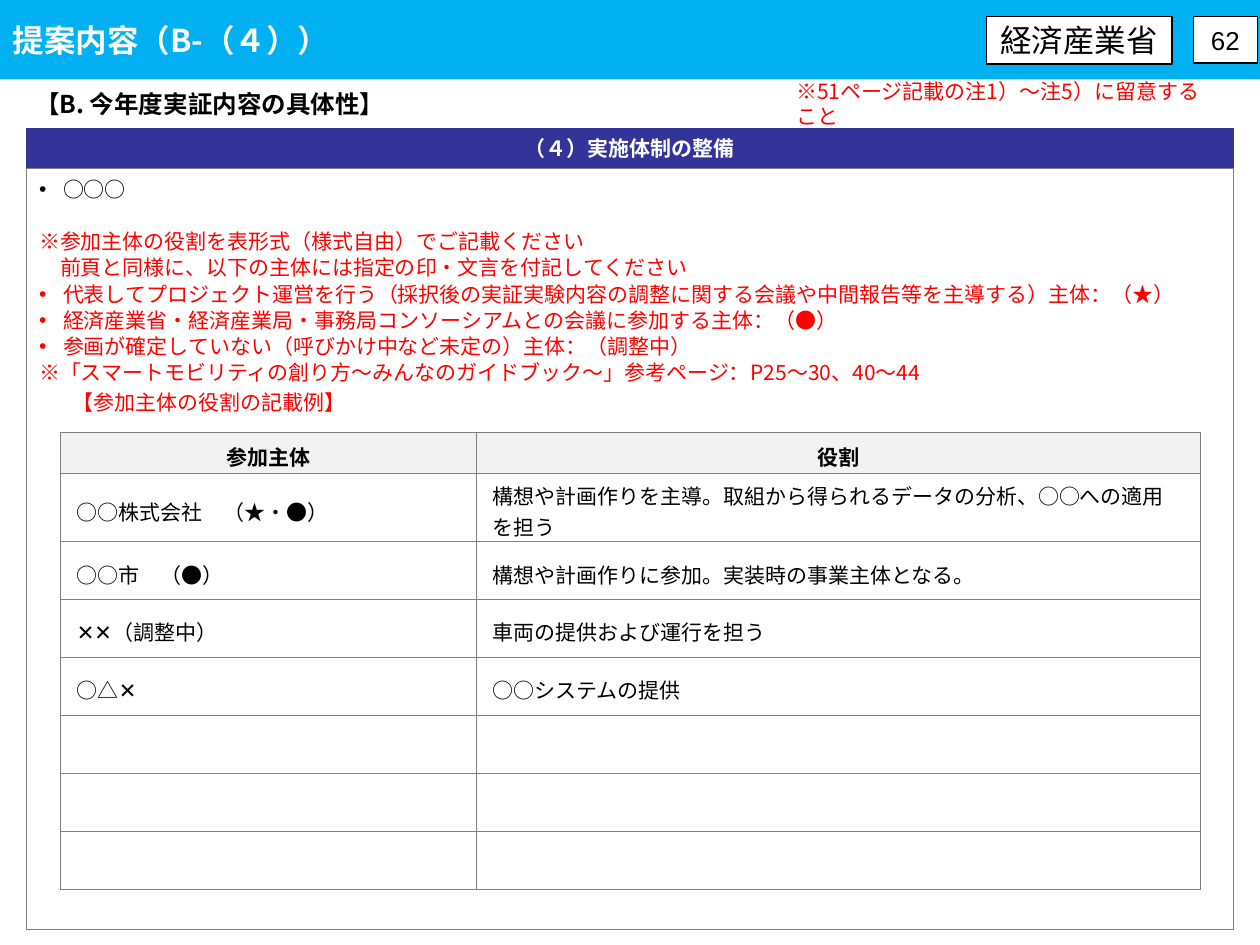
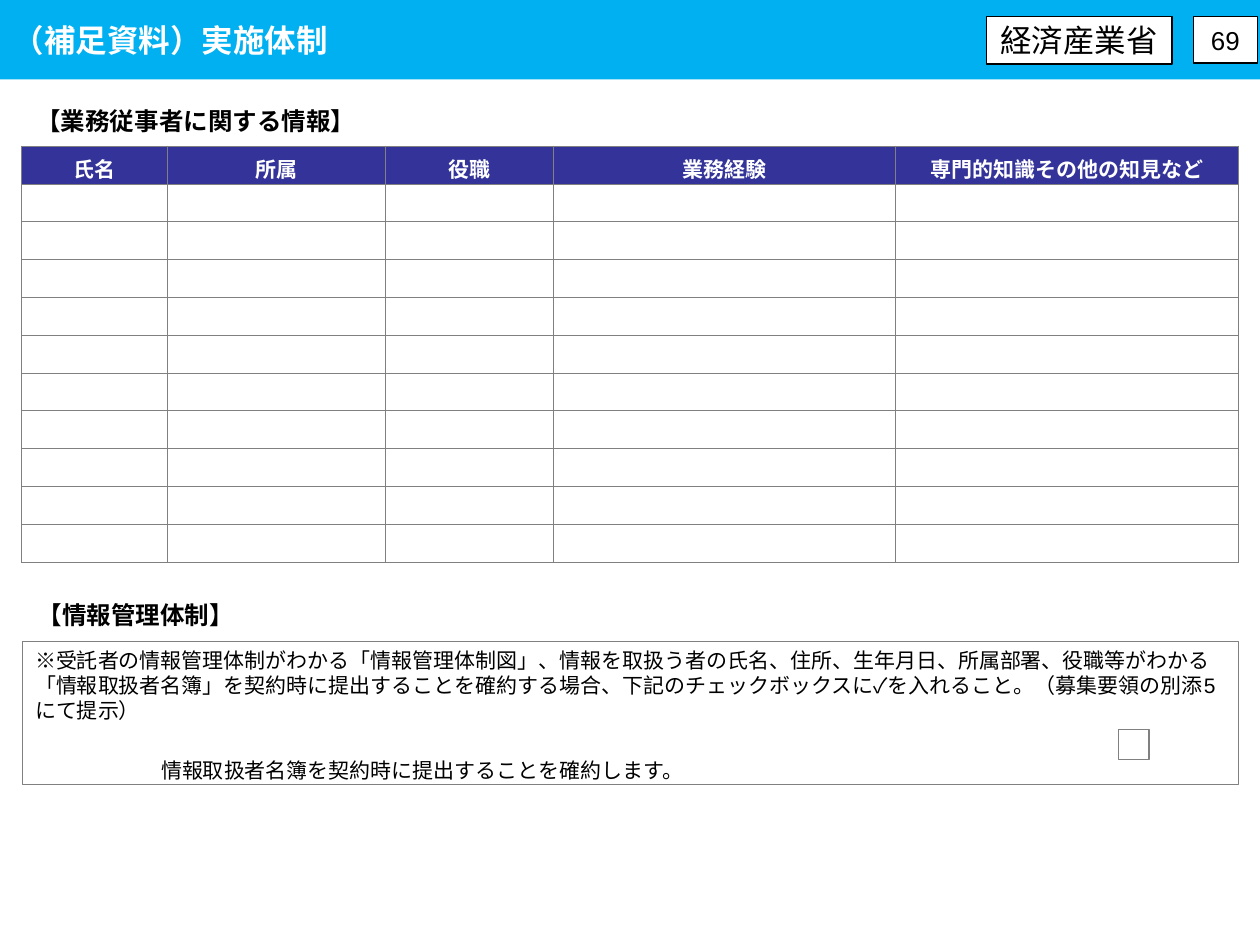
from lxml import etree
from pptx import Presentation
from pptx.dml.color import RGBColor
from pptx.enum.shapes import MSO_SHAPE
from pptx.enum.text import MSO_ANCHOR, MSO_AUTO_SIZE, PP_ALIGN
from pptx.oxml.ns import qn
from pptx.util import Inches, Pt

RECTANGLE = MSO_SHAPE.RECTANGLE
MIDDLE, TOP = MSO_ANCHOR.MIDDLE, MSO_ANCHOR.TOP
LEFT, CENTER = PP_ALIGN.LEFT, PP_ALIGN.CENTER
NO_FIT = MSO_AUTO_SIZE.NONE
TITLE_AND_BODY, TITLE_ONLY = 1, 5

SKY, NAVY, GRAY, PALE = "00B0F0", "333399", "808080", "F2F2F2"
WHITE, BLACK, RED = "FFFFFF", "000000", "FF0000"
SANS, CJK = "Arial", "Noto Sans CJK JP"
LIST_PITCH, NOTE_PITCH = 15, 14.4

GUIDANCE = [
    ("○○○", True, BLACK, 0),
    ("※参加主体の役割を表形式（様式自由）でご記載ください", False, RED, LIST_PITCH),
    ("　前頁と同様に、以下の主体には指定の印・文言を付記してください", False, RED, 0),
    ("代表してプロジェクト運営を行う（採択後の実証実験内容の調整に関する会議や"
     "中間報告等を主導する）主体：（★）", True, RED, 0),
    ("経済産業省・経済産業局・事務局コンソーシアムとの会議に参加する主体：（●）", True, RED, 0),
    ("参画が確定していない（呼びかけ中など未定の）主体：（調整中）", True, RED, 0),
    ("※「スマートモビリティの創り方～みんなのガイドブック～」参考ページ："
     "P25～30、40～44", False, RED, 0),
]
ROLES = [
    ("参加主体", "役割"),
    ("○○株式会社　（★・●）",
     "構想や計画作りを主導。取組から得られるデータの分析、○○への適用を担う"),
    ("○○市　（●）", "構想や計画作りに参加。実装時の事業主体となる。"),
    ("✕✕（調整中）", "車両の提供および運行を担う"),
    ("○△✕", "○○システムの提供"),
] + [("", "")] * 3
STAFF = [("氏名", "所属", "役職", "業務経験", "専門的知識その他の知見など")] + [("",) * 5] * 10
PLEDGE_NOTE = (
    "※受託者の情報管理体制がわかる「情報管理体制図」、情報を取扱う者の氏名、住所、"
    "生年月日、所属部署、役職等がわかる「情報取扱者名簿」を契約時に提出することを"
    "確約する場合、下記のチェックボックスに✓を入れること。（募集要領の別添5にて提示）"
)


def color(code):
    """Turn a hex string into a colour."""
    return RGBColor.from_string(code)


def place(shape, box):
    """Move a shape to a left, top, width, height box in inches."""
    shape.left, shape.top, shape.width, shape.height = map(Inches, box)


def write(para, text, size, ink=BLACK, font=CJK, bold=False, align=LEFT, pitch=None, before=0):
    """Fill a paragraph with text in one style."""
    para.text = text
    para.alignment = align
    para.space_before = Pt(before)
    if pitch:
        para.line_spacing = Pt(pitch)
    para.font.size = Pt(size)
    para.font.bold = bold
    para.font.color.rgb = color(ink)
    para.font.name = font
    defaults = para._p.pPr.find(qn("a:defRPr"))
    latin = defaults.find(qn("a:latin"))
    latin.addnext(defaults.makeelement(qn("a:ea"), {"typeface": CJK}))
    if not text:
        etree.SubElement(para._p, qn("a:endParaRPr"), sz=str(size * 100))


def indent(para, left, first=0, bullet=None):
    """Set the indents and the bullet of a paragraph."""
    props = para._p.get_or_add_pPr()
    props.set("marL", str(Inches(left)))
    props.set("indent", str(Inches(first)))
    if bullet:
        etree.SubElement(props, qn("a:buFont"), typeface=SANS)
        etree.SubElement(props, qn("a:buChar"), char=bullet)
    else:
        etree.SubElement(props, qn("a:buNone"))


def add_panel(page, box, fill=None, line=GRAY, weight=0.5, anchor=MIDDLE):
    """Add a flat rectangle and return its text frame."""
    panel = page.shapes.add_shape(RECTANGLE, *map(Inches, box))
    panel.shadow.inherit = False
    if fill:
        panel.fill.solid()
        panel.fill.fore_color.rgb = color(fill)
    else:
        panel.fill.background()
    panel.line.color.rgb = color(line)
    panel.line.width = Pt(weight)
    panel.text_frame.vertical_anchor = anchor
    return panel.text_frame


def add_label(page, box, text, size, anchor=MIDDLE, **style):
    """Add a wrapped text box with one paragraph."""
    frame = page.shapes.add_textbox(*map(Inches, box)).text_frame
    frame.word_wrap = True
    frame.vertical_anchor = anchor
    write(frame.paragraphs[0], text, size, **style)


def add_heading(page, box, text):
    """Add a bold section heading."""
    add_label(page, box, text, 14, anchor=TOP, bold=True)


def add_badge(page, box, text, size, weight):
    """Add a white outlined box with centred text."""
    frame = add_panel(page, box, WHITE, BLACK, weight)
    frame.margin_left = frame.margin_right = Inches(0.05)
    write(frame.paragraphs[0], text, size, font=SANS, align=CENTER)


def add_page(deck, layout, title, number):
    """Add a slide with the title band, ministry badge and page number."""
    page = deck.slides.add_slide(deck.slide_layouts[layout])
    band = page.shapes.title
    place(band, (0, 0, 10, 0.63))
    band.fill.solid()
    band.fill.fore_color.rgb = color(SKY)
    frame = band.text_frame
    frame.auto_size = NO_FIT
    frame.vertical_anchor = MIDDLE
    write(frame.paragraphs[0], title, 18, WHITE, bold=True)
    add_badge(page, (7.83, 0.13, 1.47, 0.38), "経済産業省", 18, 1)
    add_badge(page, (9.47, 0.13, 0.51, 0.37), number, 14.8, 0.75)
    return page


def style_cell(cell, fill, side):
    """Give a cell its margins, thin gray borders and fill."""
    cell.margin_left = cell.margin_right = Inches(side)
    cell.margin_top, cell.margin_bottom = Inches(0.05), 0
    cell.vertical_anchor = MIDDLE
    props = cell._tc.get_or_add_tcPr()
    for edge in ("a:lnL", "a:lnR", "a:lnT", "a:lnB"):
        border = etree.SubElement(props, qn(edge), w=str(Pt(0.5)))
        paint = etree.SubElement(border, qn("a:solidFill"))
        etree.SubElement(paint, qn("a:srgbClr"), val=GRAY)
    cell.fill.solid()
    cell.fill.fore_color.rgb = color(fill)


def add_grid(page, corner, widths, heights, rows, head_fill, head_ink, side=0.1):
    """Add a table with a bold centred header row."""
    size = (sum(widths), sum(heights))
    table = page.shapes.add_table(
        len(rows), len(widths), *map(Inches, corner + size)).table
    table.first_row = table.horz_banding = False
    for column, width in zip(table.columns, widths):
        column.width = Inches(width)
    for index, (row, height, texts) in enumerate(zip(table.rows, heights, rows)):
        row.height = Inches(height)
        head = index == 0
        for column, (cell, text) in enumerate(zip(row.cells, texts)):
            style_cell(cell, head_fill if head else WHITE, side)
            write(cell.text_frame.paragraphs[0], text, 12,
                  ink=head_ink if head else BLACK,
                  font=SANS if head or column else CJK,
                  bold=head, align=CENTER if head else LEFT)


def fill_guidance(page, box):
    """Place the navy section bar and the outlined list under it."""
    left, top, width, height = box
    bar = add_panel(page, (left, top, width, 0.31), NAVY, NAVY)
    write(bar.paragraphs[0], "（４）実施体制の整備", 12, WHITE, SANS, True, CENTER, LIST_PITCH)
    body = page.placeholders[1]
    place(body, (left, top + 0.32, width, height - 0.32))
    body.line.color.rgb = color(GRAY)
    body.line.width = Pt(0.5)
    frame = body.text_frame
    frame.auto_size = NO_FIT
    for index, (text, bulleted, ink, before) in enumerate(GUIDANCE):
        para = frame.add_paragraph() if index else frame.paragraphs[0]
        if bulleted:
            indent(para, 0.19, -0.19, "•")
        else:
            indent(para, 0)
        write(para, text, 12, ink, pitch=LIST_PITCH, before=before)


def add_pledge(page, box):
    """Place the pledge note with its checkbox."""
    left, top = box[:2]
    frame = add_panel(page, box, anchor=TOP)
    write(frame.paragraphs[0], PLEDGE_NOTE, 12, font=SANS, pitch=NOTE_PITCH)
    pledge = frame.add_paragraph()
    indent(pledge, 1)
    write(pledge, "情報取扱者名簿を契約時に提出することを確約します。", 12,
          font=SANS, pitch=NOTE_PITCH, before=19.5)
    add_panel(page, (left + 8.7, top + 0.7, 0.24, 0.24), WHITE, GRAY, 0.75)


def build_roles_page(deck):
    """Build the slide on the roles of the participants."""
    page = add_page(deck, TITLE_AND_BODY, "提案内容（B-（４））", "62")
    add_heading(page, (0.18, 0.66, 3.56, 0.34), "【B. 今年度実証内容の具体性】")
    add_label(page, (6.22, 0.67, 3.56, 0.31), "※51ページ記載の注1）～注5）に留意すること",
              12, ink=RED, pitch=NOTE_PITCH)
    fill_guidance(page, (0.21, 1.02, 9.58, 6.36))
    add_label(page, (0.48, 3.04, 2.91, 0.31), "【参加主体の役割の記載例】", 12, ink=RED)
    add_grid(page, (0.48, 3.43), [3.3, 5.75], [0.33, 0.54] + [0.46] * 6,
             ROLES, PALE, BLACK, side=0.13)


def build_staff_page(deck):
    """Build the slide on staff and information management."""
    page = add_page(deck, TITLE_ONLY, "（補足資料）実施体制", "69")
    add_heading(page, (0.19, 0.79, 6.94, 0.34), "【業務従事者に関する情報】")
    add_grid(page, (0.17, 1.16), [1.16, 1.73, 1.33, 2.72, 2.72], [0.3] * len(STAFF),
             STAFF, NAVY, WHITE)
    add_heading(page, (0.2, 4.71, 8.09, 0.34), "【情報管理体制】")
    add_pledge(page, (0.18, 5.09, 9.65, 1.14))


def main():
    """Build and save the deck."""
    deck = Presentation()
    deck.slide_width, deck.slide_height = Inches(10), Inches(7.5)
    build_roles_page(deck)
    build_staff_page(deck)
    deck.save("out.pptx")


if __name__ == "__main__":
    main()
